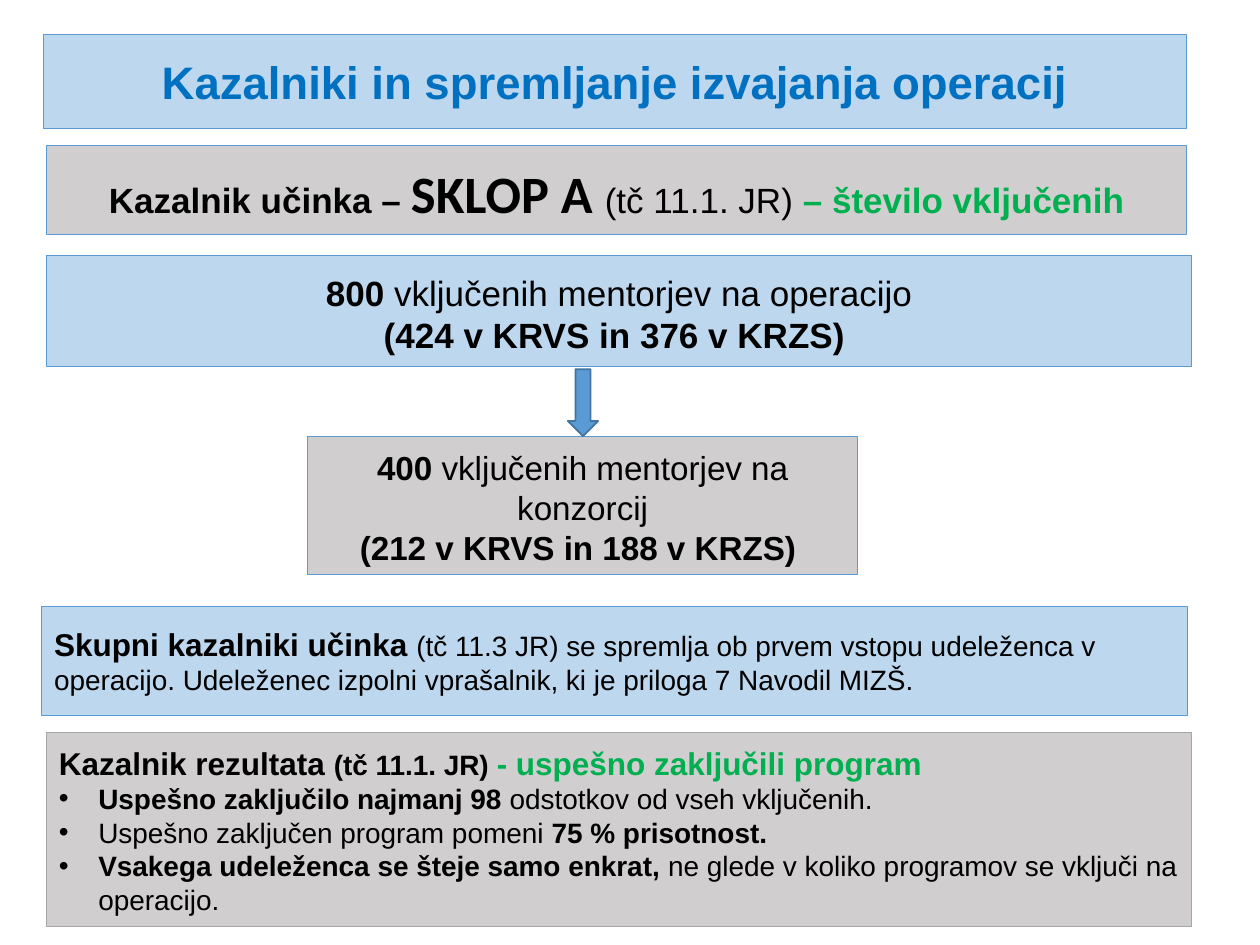
from dataclasses import dataclass

from lxml.etree import SubElement
from pptx import Presentation
from pptx.dml.color import RGBColor
from pptx.enum.shapes import MSO_SHAPE
from pptx.enum.text import MSO_ANCHOR, PP_ALIGN
from pptx.oxml.ns import qn
from pptx.util import Pt

BLUE, GREY = "BDD7EE", "D0CECE"
EDGE, GREY_EDGE = "5B9BD5", "A6A6A6"
BLACK, GREEN, TITLE_BLUE = "000000", "00B050", "0070C0"
INDENT = Pt(22.5)


@dataclass
class Run:
    text: str
    size: float
    bold: bool = False
    color: str = BLACK
    font: str = "Arial"


@dataclass
class Para:
    runs: list[Run]
    bullet: bool = False


@dataclass
class Box:
    left: float
    top: float
    width: float
    height: float
    paras: list[Para]
    fill: str = BLUE
    edge: str = EDGE
    edge_width: float = 0.5
    align: PP_ALIGN = PP_ALIGN.CENTER
    top_inset: float = 3.6
    shape: MSO_SHAPE = MSO_SHAPE.RECTANGLE


def rgb(value: str) -> RGBColor:
    return RGBColor.from_string(value)


def add_bullet(p) -> None:
    pPr = p._p.get_or_add_pPr()
    pPr.set("marL", str(INDENT))
    pPr.set("indent", str(-INDENT))
    SubElement(pPr, qn("a:buFont")).set("typeface", "Arial")
    SubElement(pPr, qn("a:buChar")).set("char", "•")


def draw_para(p, para: Para, align: PP_ALIGN) -> None:
    p.alignment = align
    if para.bullet:
        add_bullet(p)
    for run in para.runs:
        r = p.add_run()
        r.text = run.text
        r.font.name = run.font
        r.font.size = Pt(run.size)
        r.font.bold = run.bold
        r.font.color.rgb = rgb(run.color)


def draw_box(s, box: Box) -> None:
    sp = s.shapes.add_shape(box.shape, Pt(box.left), Pt(box.top),
                            Pt(box.width), Pt(box.height))
    sp.shadow.inherit = False
    sp.fill.solid()
    sp.fill.fore_color.rgb = rgb(box.fill)
    sp.line.color.rgb = rgb(box.edge)
    sp.line.width = Pt(box.edge_width)
    tf = sp.text_frame
    tf.word_wrap = True
    tf.vertical_anchor = MSO_ANCHOR.MIDDLE
    tf.margin_top = Pt(box.top_inset)
    for i, para in enumerate(box.paras):
        p = tf.add_paragraph() if i else tf.paragraphs[0]
        draw_para(p, para, box.align)


def mentors(count: str, scope: str, split: str, size: float) -> list[Para]:
    return [
        Para([Run(f"{count} ", size, True),
              Run(f"vključenih mentorjev na {scope}", size)]),
        Para([Run(f"({split}) ", size, True)]),
    ]


BOXES = [
    Box(25, 19.5, 653, 54, [
        Para([Run("Kazalniki in spremljanje izvajanja operacij", 26, True, TITLE_BLUE)]),
    ]),
    Box(26.6, 83.4, 651.6, 50.5, [
        Para([Run("Kazalnik učinka – ", 20, True),
              Run("SKLOP A ", 30, True, font="Calibri"),
              Run("(tč 11.1. JR) ", 20),
              Run("– število vključenih", 20, True, GREEN)]),
    ], fill=GREY, top_inset=6),
    Box(26.6, 146, 654.5, 63.4,
        mentors("800", "operacijo", "424 v KRVS in 376 v KRZS", 20), top_inset=6),
    Box(175.7, 249.2, 314.6, 79.2,
        mentors("400", "konzorcij", "212 v KRVS in 188 v KRZS", 19),
        fill=GREY, top_inset=6),
    Box(23.8, 346.4, 654.5, 62.5, [
        Para([Run("Skupni kazalniki učinka ", 18, True),
              Run("(tč 11.3 JR) se spremlja ob prvem vstopu udeleženca v operacijo. "
                  "Udeleženec izpolni vprašalnik, ki je priloga 7 Navodil MIZŠ.", 16)]),
    ], align=PP_ALIGN.LEFT),
    Box(26.6, 418.8, 654.5, 110.8, [
        Para([Run("Kazalnik rezultata ", 18, True),
              Run("(tč 11.1. JR) ", 16, True),
              Run("- uspešno zaključili program", 18, True, GREEN)]),
        Para([Run("Uspešno zaključilo najmanj 98 ", 16, True),
              Run("odstotkov od vseh vključenih.", 16)], bullet=True),
        Para([Run("Uspešno zaključen program pomeni ", 16),
              Run("75 % prisotnost.", 16, True)], bullet=True),
        Para([Run("Vsakega udeleženca se šteje samo enkrat, ", 16, True),
              Run("ne glede v koliko programov se vključi na operacijo.", 16)],
             bullet=True),
    ], fill=GREY, edge=GREY_EDGE, align=PP_ALIGN.LEFT),
    Box(324.5, 211, 17.3, 38.2, [], fill=EDGE, edge="43739E", edge_width=1,
        shape=MSO_SHAPE.DOWN_ARROW),
]


def main() -> None:
    prs = Presentation()
    prs.slide_width, prs.slide_height = Pt(720), Pt(540)
    s = prs.slides.add_slide(prs.slide_layouts[6])
    for box in BOXES:
        draw_box(s, box)
    prs.save("out.pptx")


if __name__ == "__main__":
    main()
